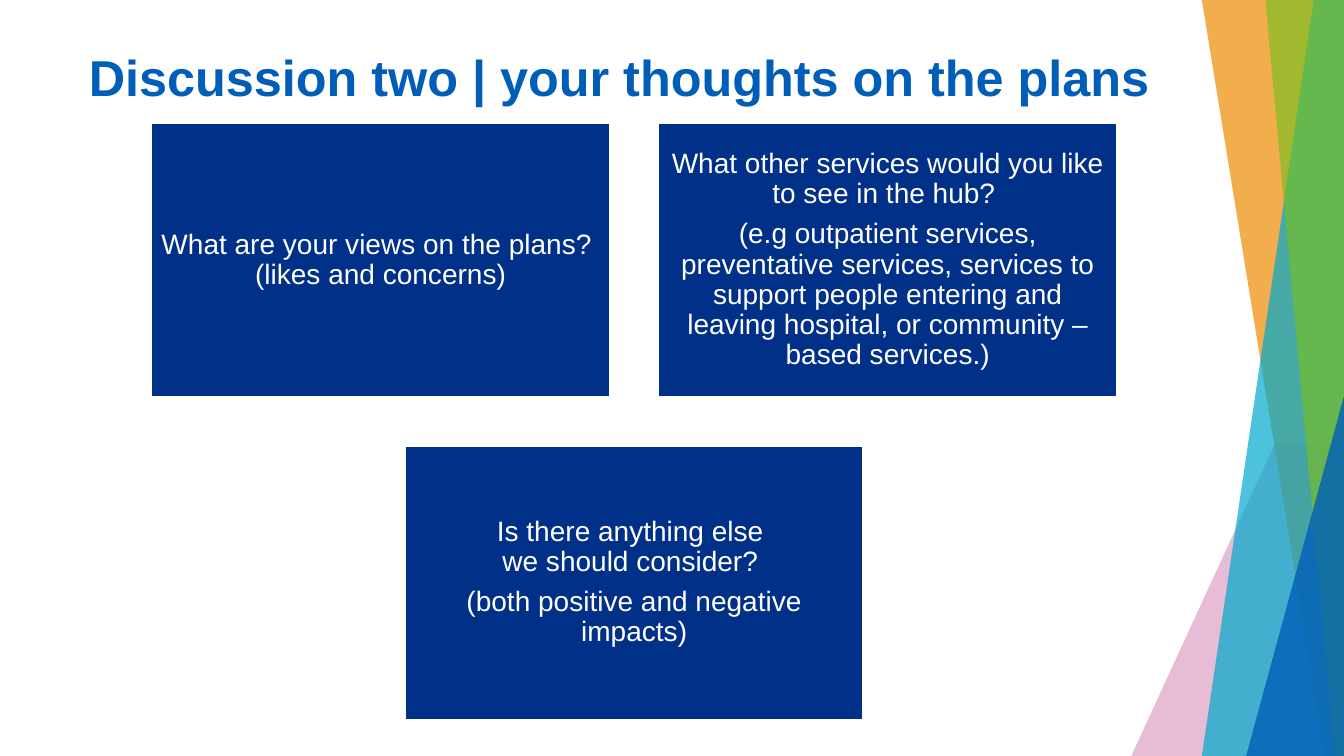
from lxml import etree
from pptx import Presentation
from pptx.dml.color import RGBColor as RGB
from pptx.enum.shapes import MSO_SHAPE as SHAPE
from pptx.enum.text import MSO_ANCHOR as ANCHOR, PP_ALIGN as ALIGN
from pptx.oxml.ns import qn
from pptx.util import Inches, Pt

COLORS = {"navy": "003087", "blue": "005EB8", "white": "FFFFFF", "pink": "AE2573",
          "orange": "ED8B00", "cyan": "00A9CE", "green": "78BE20"}
W, H = 13.33, 7.5


def fill_facet(sp, color, opacity):
    sp.shadow.inherit = False
    sp.fill.solid()
    sp.fill.fore_color.rgb = RGB.from_string(COLORS[color])
    rgb = sp.fill._xPr.find(".//" + qn("a:srgbClr"))
    etree.SubElement(rgb, qn("a:alpha")).set("val", str(opacity * 1000))
    sp.line.fill.background()


def add_run(p, text, size, color, bold=False):
    r = p.add_run()
    r.text = text
    r.font.name = "Arial"
    r.font.size = Pt(size)
    r.font.bold = bold
    r.font.color.rgb = RGB.from_string(COLORS[color])


prs = Presentation()
prs.slide_width, prs.slide_height = Inches(W), Inches(H)
s = prs.slides.add_slide(prs.slide_layouts[5])

facets = [
    ("pink", 30, [(12.65, 4.39), (W, 4.39), (W, H), (11.22, H)]),
    ("orange", 70, [(11.92, 0), (W, 0), (W, H), (13.14, H)]),
    ("cyan", 70, [(13.03, 0), (W, 0), (W, H), (11.92, H)]),
    ("green", 65, [(12.55, 0), (W, 0), (W, H), (13.24, H)]),
]
for color, opacity, points in facets:
    start, *rest = [(Inches(x), Inches(y)) for x, y in points]
    outline = s.shapes.build_freeform(*start)
    outline.add_line_segments(rest, close=True)
    fill_facet(outline.convert_to_shape(), color, opacity)

corner = s.shapes.add_shape(SHAPE.ISOSCELES_TRIANGLE, Inches(12.36), Inches(3.93),
                            Inches(W - 12.36), Inches(H - 3.93))
corner.adjustments[0] = 1
fill_facet(corner, "blue", 80)

title = s.shapes.title
title.left, title.top = Inches(0.74), Inches(0.35)
title.width, title.height = Inches(10.81), Inches(0.81)
tf = title.text_frame
tf.vertical_anchor = ANCHOR.MIDDLE
p = tf.paragraphs[0]
p.alignment = ALIGN.CENTER
add_run(p, "Discussion two | your thoughts on the plans", 36, "blue", True)

CARD_W, CARD_H, GAP = 4.55, 2.72, 0.48
LEFT, TOP = 1.5, 1.22
cards = [
    (0, 0, [["What are your views on the plans? ", "(likes and concerns)"]]),
    (1, 0, [["What other services would you like to see in the hub? "],
            ["(e.g outpatient services, preventative services, services to support "
             "people entering and leaving hospital, or community –based services.)"]]),
    (0.5, 1, [["Is there anything else ", "we should consider? "],
              ["(both positive and negative impacts)"]]),
]
for col, row, paragraphs in cards:
    sp = s.shapes.add_shape(SHAPE.RECTANGLE, Inches(LEFT + col * (CARD_W + GAP)),
                            Inches(TOP + row * (CARD_H + GAP)), Inches(CARD_W), Inches(CARD_H))
    sp.shadow.inherit = False
    sp.fill.solid()
    sp.fill.fore_color.rgb = RGB.from_string(COLORS["navy"])
    sp.line.color.rgb = RGB.from_string(COLORS["white"])
    sp.line.width = Pt(1.5)
    tf = sp.text_frame
    tf.word_wrap = True
    tf.vertical_anchor = ANCHOR.MIDDLE
    tf.margin_left = tf.margin_right = tf.margin_top = tf.margin_bottom = Inches(0.08)
    for i, lines in enumerate(paragraphs):
        p = tf.add_paragraph() if i else tf.paragraphs[0]
        p.alignment = ALIGN.CENTER
        p.line_spacing = 0.9
        p.space_after = Pt(7)
        for j, line in enumerate(lines):
            if j:
                p.add_line_break()
            add_run(p, line, 20, "white")

prs.save("out.pptx")
